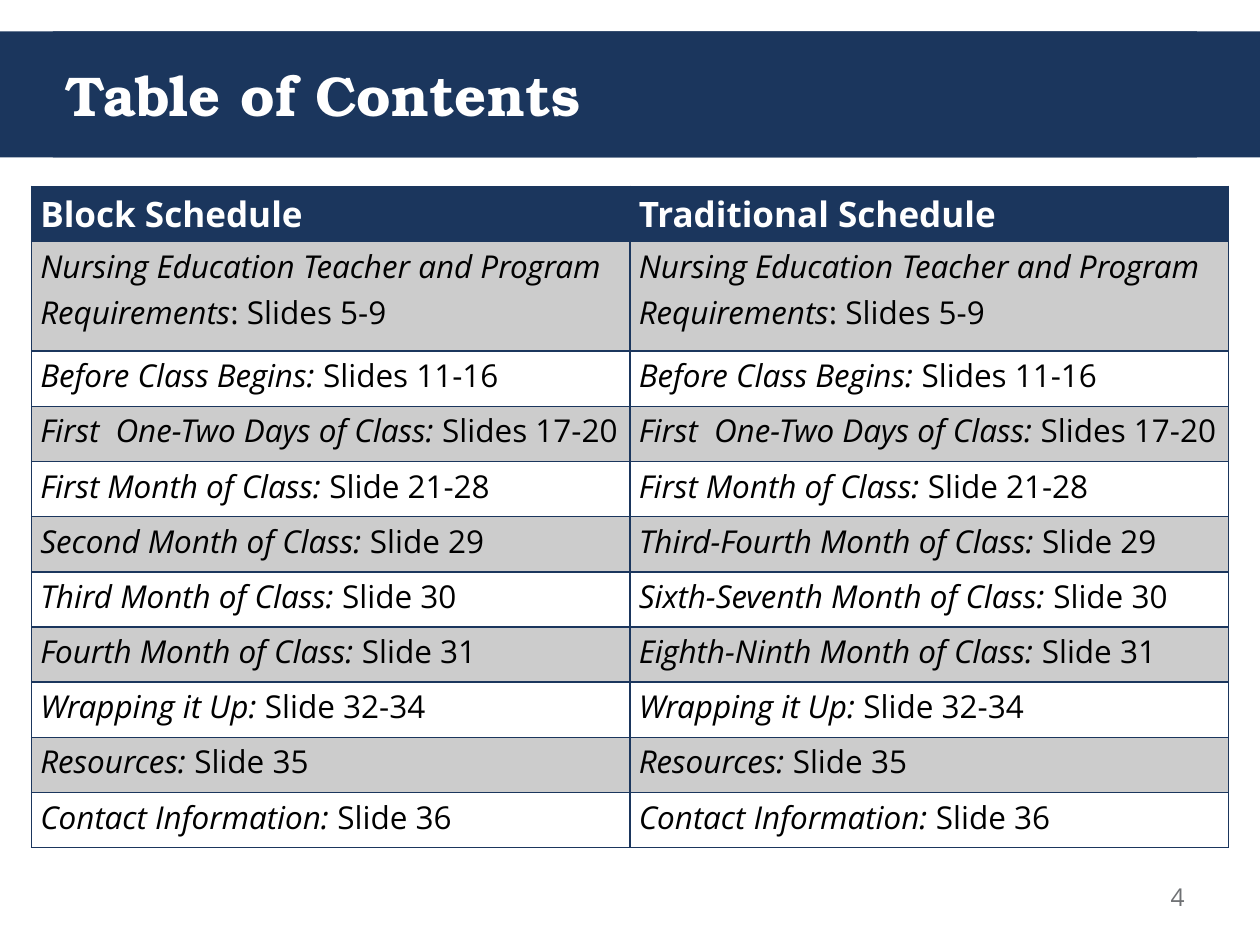
from pptx import Presentation
from pptx.dml.color import RGBColor
from pptx.enum.shapes import MSO_SHAPE
from pptx.enum.text import MSO_ANCHOR, PP_ALIGN
from pptx.oxml.ns import qn
from pptx.util import Inches, Pt
from lxml.etree import SubElement

COLORS = {"navy": "1B365D", "gray": "CCCCCC", "white": "FFFFFF",
          "black": "000000", "number": "6E7073"}
BODY_FONT, TITLE_FONT = "Open Sans", "TeX Gyre Bonum"
HEADERS = ["Block Schedule", "Traditional Schedule"]
SHARED_START = [
    ("Nursing Education Teacher and Program Requirements", ": Slides 5-9"),
    ("Before Class Begins: ", "Slides 11-16"),
    ("First  One-Two Days of Class: ", "Slides 17-20"),
    ("First Month of Class: ", "Slide 21-28"),
]
MONTHS = [
    ("Second", "Third-Fourth", "Slide 29"),
    ("Third", "Sixth-Seventh", "Slide 30"),
    ("Fourth", "Eighth-Ninth", "Slide 31"),
]
SHARED_END = [
    ("Wrapping it Up: ", "Slide 32-34"),
    ("Resources: ", "Slide 35"),
    ("Contact Information: ", "Slide 36"),
]


def rgb(name):
    return RGBColor.from_string(COLORS[name])


def style_run(r, size, color, font=BODY_FONT, bold=False, italic=False):
    r.font.name, r.font.size = font, Pt(size)
    r.font.bold, r.font.italic = bold, italic
    r.font.color.rgb = rgb(color)


def add_bar(s, x, y, w, h):
    sp = s.shapes.add_shape(MSO_SHAPE.RECTANGLE, Inches(x), Inches(y), Inches(w), Inches(h))
    sp.shadow.inherit = False
    sp.fill.solid()
    sp.fill.fore_color.rgb = rgb("navy")
    sp.line.fill.background()
    return sp


def add_title(s, x, y, w, h):
    add_bar(s, x, y, w, h)
    tf = add_bar(s, x + 0.42, y, w - 0.92, h).text_frame
    tf.text = "Table of Contents"
    tf.vertical_anchor = MSO_ANCHOR.MIDDLE
    p = tf.paragraphs[0]
    p.alignment = PP_ALIGN.LEFT
    style_run(p.runs[0], 32, "white", TITLE_FONT, bold=True)


def add_borders(cell):
    tc_pr = cell._tc.get_or_add_tcPr()
    for i, side in enumerate(("lnL", "lnR", "lnT", "lnB")):
        ln = tc_pr.makeelement(qn(f"a:{side}"), {"w": str(Pt(1))})
        fill = SubElement(ln, qn("a:solidFill"))
        SubElement(fill, qn("a:srgbClr"), val=COLORS["navy"])
        tc_pr.insert(i, ln)


def fill_cell(cell, parts, fill, size, color, bold=False):
    cell.margin_left = cell.margin_right = Inches(0.07)
    cell.margin_top = cell.margin_bottom = 0
    cell.fill.solid()
    cell.fill.fore_color.rgb = rgb(fill)
    p = cell.text_frame.paragraphs[0]
    p.line_spacing = 1.07
    for text, italic in parts:
        r = p.add_run()
        r.text = text
        style_run(r, size, color, bold=bold, italic=italic)
    add_borders(cell)


def add_schedule(s, x, y, w, h):
    months = [[(f"{name} Month of Class: ", slides) for name in (block, traditional)]
              for block, traditional, slides in MONTHS]
    rows = [[e, e] for e in SHARED_START] + months + [[e, e] for e in SHARED_END]
    table = s.shapes.add_table(len(rows) + 1, len(HEADERS), Inches(x), Inches(y),
                               Inches(w), Inches(h)).table
    for column in table.columns:
        column.width = Inches(w / len(HEADERS))
    tall = 0.87
    for i, row in enumerate(table.rows):
        row.height = Inches(tall if i == 1 else (h - tall) / len(rows))
    for j, header in enumerate(HEADERS):
        fill_cell(table.cell(0, j), [(header, False)], "navy", 20, "white", bold=True)
    for i, entries in enumerate(rows, 1):
        fill = "gray" if i % 2 else "white"
        for j, (topic, slides) in enumerate(entries):
            fill_cell(table.cell(i, j), [(topic, True), (slides, False)], fill, 18, "black")


def add_page_number(s, x, y, w, h):
    tf = s.shapes.add_textbox(Inches(x), Inches(y), Inches(w), Inches(h)).text_frame
    tf.word_wrap = True
    tf.text = "4"
    p = tf.paragraphs[0]
    p.alignment = PP_ALIGN.RIGHT
    style_run(p.runs[0], 14, "number")


def main():
    prs = Presentation()
    prs.slide_width, prs.slide_height = Inches(10), Inches(7.5)
    s = prs.slides.add_slide(prs.slide_layouts[6])
    add_title(s, 0, 0.25, 10, 1)
    add_schedule(s, 0.25, 1.48, 9.5, 5.25)
    add_page_number(s, 9, 6.95, 0.5, 0.4)
    prs.save("out.pptx")


if __name__ == "__main__":
    main()
